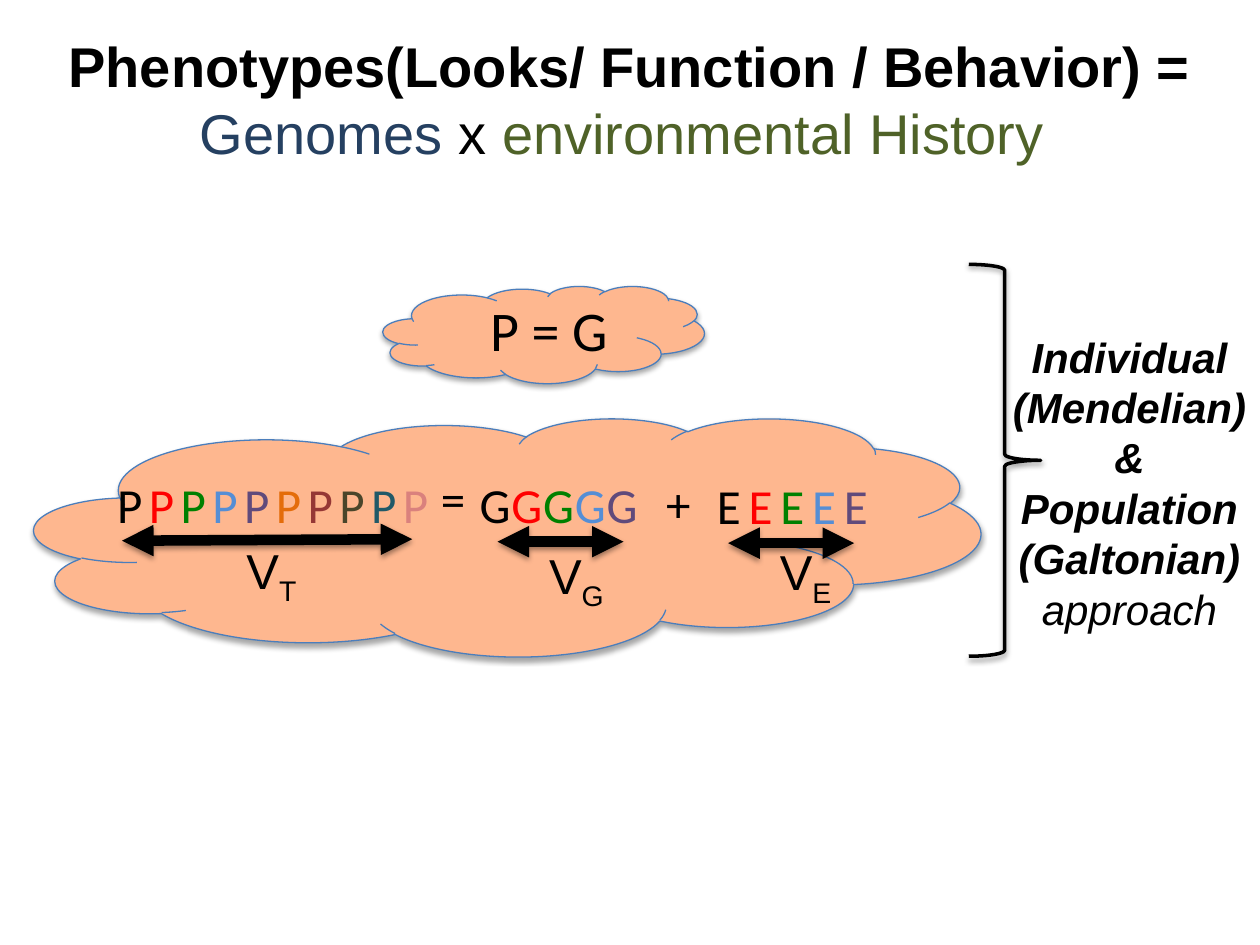
import pptx
import pptx.dml.color
import pptx.enum.shapes
import pptx.enum.text
import pptx.oxml
import pptx.oxml.ns
import pptx.util

Cm = pptx.util.Cm
Pt = pptx.util.Pt
SHAPES = pptx.enum.shapes.MSO_SHAPE
CENTER = pptx.enum.text.PP_ALIGN.CENTER
NS = pptx.oxml.ns.nsdecls("a")

COLORS = {
    "black": "000000", "red": "FF0000", "green": "008000", "blue": "558ED5",
    "purple": "604A7B", "orange": "E46C0A", "maroon": "953735",
    "olive": "4A452A", "teal": "215968", "pink": "DA817D",
    "cloud": "FEB78F", "cloud_edge": "4B7EBC",
    "genome": "254061", "environment": "4F6228",
}
INDIVIDUALS = ["black", "red", "green", "blue", "purple",
               "orange", "maroon", "olive", "teal", "pink"]


def rgb(name):
    return pptx.dml.color.RGBColor.from_string(COLORS[name])


class SlideBuilder:
    symbol_font = "Calibri"
    text_font = "Arial"
    symbol_size = 28
    letter_step = 0.64

    def __init__(self, slide):
        self.slide = slide

    def shadow(self, element, alpha, distance):
        properties = element.spPr
        for old in properties.findall(pptx.oxml.ns.qn("a:effectLst")):
            properties.remove(old)
        properties.append(pptx.oxml.parse_xml(
            f'<a:effectLst {NS}><a:outerShdw blurRad="{Pt(3.1)}" dist="{Pt(distance)}" '
            f'dir="5400000" rotWithShape="0"><a:srgbClr val="{COLORS["black"]}">'
            f'<a:alpha val="{alpha * 1000}"/></a:srgbClr></a:outerShdw></a:effectLst>'))

    def style(self, paragraph, font, size, bold=False, italic=False, align=None):
        paragraph.font.name = font
        paragraph.font.size = Pt(size)
        paragraph.font.bold = bold
        paragraph.font.italic = italic
        paragraph.font.color.rgb = rgb("black")
        paragraph.alignment = align

    def shape(self, kind, box, line, width, fill=None, alpha=38, distance=1.6):
        shape = self.slide.shapes.add_shape(kind, *map(Cm, box))
        shape.shadow.inherit = False
        if fill:
            shape.fill.solid()
            shape.fill.fore_color.rgb = rgb(fill)
        else:
            shape.fill.background()
        shape.line.color.rgb = rgb(line)
        shape.line.width = Pt(width)
        self.shadow(shape._element, alpha, distance)

    def cloud(self, *box):
        self.shape(SHAPES.CLOUD, box, "cloud_edge", 0.75, "cloud", 35, 1.8)

    def brace(self, *box):
        self.shape(SHAPES.RIGHT_BRACE, box, "black", 2)

    def text_frame(self, box, wrap=False):
        frame = self.slide.shapes.add_textbox(*map(Cm, box)).text_frame
        frame.word_wrap = wrap
        return frame

    def symbol(self, text, box, color="black", size=symbol_size, wrap=False):
        paragraph = self.text_frame(box, wrap).paragraphs[0]
        paragraph.add_run().text = text
        self.style(paragraph, self.symbol_font, size)
        paragraph.font.color.rgb = rgb(color)

    def letters(self, letter, left, top, width, colors):
        for i, color in enumerate(colors):
            self.symbol(letter, (left + i * self.letter_step, top, width, 1.45), color)

    def variance(self, subscript, *box):
        paragraph = self.text_frame(box).paragraphs[0]
        paragraph.add_run().text = "V"
        index = paragraph.add_run()
        index.text = subscript
        index.font._element.set("baseline", "-25000")
        self.style(paragraph, self.text_font, self.symbol_size)

    def spread_arrow(self, *ends):
        arrow = self.slide.shapes.add_connector(
            pptx.enum.shapes.MSO_CONNECTOR.STRAIGHT, *map(Cm, ends))
        arrow.line.color.rgb = rgb("black")
        arrow.line.width = Pt(6)
        line = arrow.line._get_or_add_ln()
        for end in ("headEnd", "tailEnd"):
            line.append(pptx.oxml.parse_xml(f'<a:{end} {NS} type="triangle"/>'))
        self.shadow(arrow._element, 38, 1.6)

    def title(self, box, parts):
        title = self.slide.shapes.title
        title.left, title.top, title.width, title.height = map(Cm, box)
        paragraph = title.text_frame.paragraphs[0]
        self.style(paragraph, self.text_font, 32, align=CENTER)
        for text, color, bold in parts:
            run = paragraph.add_run()
            run.text = text
            run.font.bold = bold
            run.font.color.rgb = rgb(color)

    def approach(self, box, lines, ending):
        frame = self.text_frame(box, wrap=True)
        for i, line in enumerate(lines):
            paragraph = frame.add_paragraph() if i else frame.paragraphs[0]
            paragraph.add_run().text = line
            self.style(paragraph, self.text_font, 24, True, True, CENTER)
        last = paragraph.add_run()
        last.text = ending
        last.font.bold = False


def main():
    deck = pptx.Presentation()
    deck.slide_width, deck.slide_height = Cm(25.4), Cm(19.05)
    builder = SlideBuilder(deck.slides.add_slide(deck.slide_layouts[5]))

    builder.title((0, 0.48, 25.4, 3), [
        ("Phenotypes(Looks/ Function / Behavior) = ", "black", True),
        ("Genomes ", "genome", False),
        ("x ", "black", False),
        ("environmental History ", "environment", False),
    ])

    builder.cloud(0.69, 8.43, 19.08, 4.8)
    builder.cloud(7.72, 5.77, 6.48, 1.96)
    builder.symbol("P = G", (9.63, 5.84, 3.43, 1.63), size=32, wrap=True)

    builder.letters("P", 2.11, 9.45, 1.04, INDIVIDUALS)
    builder.symbol("=", (8.64, 9.32, 1.02, 1.45))
    builder.letters("G", 9.42, 9.45, 1.14, INDIVIDUALS[:5])
    builder.symbol("+", (13.18, 9.42, 1.02, 1.45))
    builder.letters("E", 14.2, 9.47, 0.99, INDIVIDUALS[:5])

    builder.spread_arrow(2.46, 10.9, 8.31, 10.87)
    builder.spread_arrow(10.03, 10.92, 12.57, 10.92)
    builder.spread_arrow(14.68, 10.95, 17.22, 10.95)
    builder.variance("T", 4.72, 10.77, 1.57, 1.4)
    builder.variance("G", 10.82, 10.87, 1.7, 1.4)
    builder.variance("E", 15.47, 10.8, 1.63, 1.4)

    builder.brace(19.53, 5.33, 1.45, 7.9)
    builder.approach((20.14, 6.55, 5.26, 6.4), [
        "Individual", "(Mendelian) & Population", "(Galtonian) "], "approach")

    deck.save("out.pptx")


if __name__ == "__main__":
    main()
